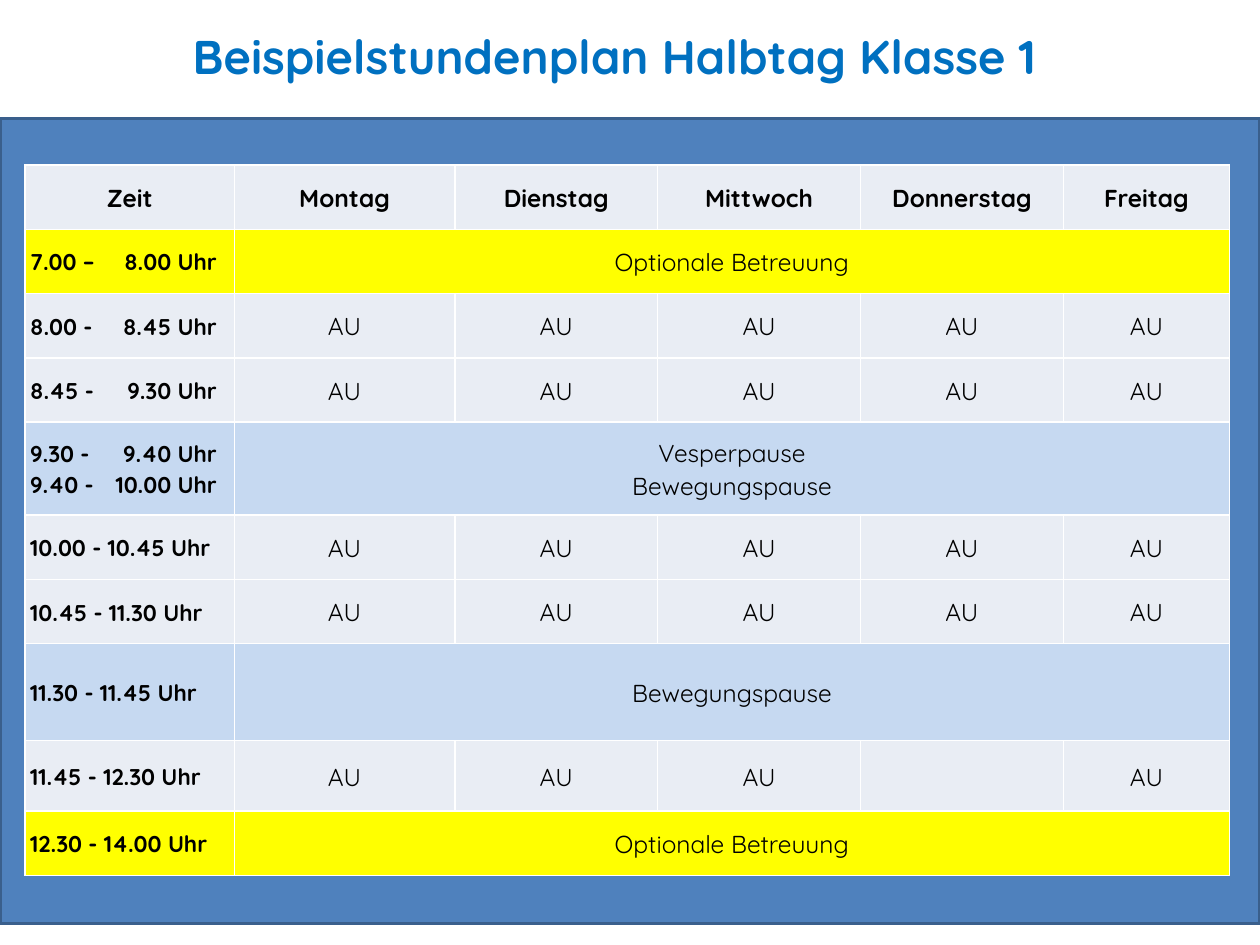
import pptx
import pptx.util
import pptx.dml.color
import pptx.enum.shapes
import pptx.enum.text
import pptx.oxml
import pptx.oxml.ns
from pptx.util import Inches

COLORS = {
    "title": "0070C0",
    "panel": "4F81BD",
    "panel_line": "3A5F8C",
    "lesson": "E9EDF4",
    "care": "FFFF00",
    "pause": "C6D9F1",
    "border": "FFFFFF",
    "text": "000000",
}
CENTER = pptx.enum.text.PP_ALIGN.CENTER
LEFT = pptx.enum.text.PP_ALIGN.LEFT
MIDDLE = pptx.enum.text.MSO_ANCHOR.MIDDLE
TITLE = {"name": "Quicksand", "size": pptx.util.Pt(27), "bold": True}
HEADING = {"name": "Quicksand", "size": pptx.util.Pt(14), "bold": True}
TIME = {"name": "Quicksand", "size": pptx.util.Pt(13), "bold": True}
ENTRY = {"name": "Quicksand", "size": pptx.util.Pt(14), "bold": False}
CELL = {
    "margin_left": Inches(0.04),
    "margin_right": Inches(0.04),
    "margin_top": 0,
    "margin_bottom": 0,
    "vertical_anchor": MIDDLE,
}


def rgb(name):
    return pptx.dml.color.RGBColor.from_string(COLORS[name])


def write(paragraph, text, style, color, alignment):
    paragraph.alignment = alignment
    run = paragraph.add_run()
    run.text = text
    for attribute, value in style.items():
        setattr(run.font, attribute, value)
    run.font.color.rgb = rgb(color)


presentation = pptx.Presentation()
presentation.slide_width = Inches(10)
presentation.slide_height = Inches(7.5)
slide = presentation.slides.add_slide(presentation.slide_layouts[6])

panel = slide.shapes.add_shape(
    pptx.enum.shapes.MSO_SHAPE.RECTANGLE, Inches(0), Inches(0.94), Inches(10), Inches(6.39)
)
panel.shadow.inherit = False
panel.fill.solid()
panel.fill.fore_color.rgb = rgb("panel")
panel.line.color.rgb = rgb("panel_line")
panel.line.width = pptx.util.Pt(2)

title = slide.shapes.add_textbox(Inches(0), Inches(0.04), Inches(9.75), Inches(0.8))
title.text_frame.word_wrap = True
title.text_frame.vertical_anchor = MIDDLE
write(title.text_frame.paragraphs[0], "Beispielstundenplan Halbtag Klasse 1", TITLE, "title", CENTER)

lessons = ["AU"] * 5
schedule = [
    (0.51, "lesson", ["Zeit"], ["Montag", "Dienstag", "Mittwoch", "Donnerstag", "Freitag"]),
    (0.51, "care", ["7.00 –\t8.00 Uhr"], ["Optionale Betreuung"]),
    (0.51, "lesson", ["8.00 -\t8.45 Uhr"], lessons),
    (0.51, "lesson", ["8.45 -\t9.30 Uhr"], lessons),
    (0.74, "pause", ["9.30 -\t9.40 Uhr", "9.40 -\t10.00 Uhr"], ["Vesperpause\nBewegungspause"]),
    (0.51, "lesson", ["10.00 - 10.45 Uhr"], lessons),
    (0.51, "lesson", ["10.45 - 11.30 Uhr"], lessons),
    (0.77, "pause", ["11.30 - 11.45 Uhr"], ["Bewegungspause"]),
    (0.56, "lesson", ["11.45 - 12.30 Uhr"], ["AU", "AU", "AU", "", "AU"]),
    (0.51, "care", ["12.30 - 14.00 Uhr"], ["Optionale Betreuung"]),
]
column_widths = [1.66, 1.75, 1.61, 1.61, 1.61, 1.32]

table = slide.shapes.add_table(
    len(schedule), len(column_widths), Inches(0.2), Inches(1.31),
    Inches(sum(column_widths)), Inches(sum(row[0] for row in schedule)),
).table
table.first_row = False
table.horz_banding = False
for column, width in zip(table.columns, column_widths):
    column.width = Inches(width)

for row_index, (height, color, times, entries) in enumerate(schedule):
    table.rows[row_index].height = Inches(height)
    if len(entries) == 1:
        table.cell(row_index, 1).merge(table.cell(row_index, 5))
    contents = [times] + [entry.split("\n") for entry in entries]
    for column_index in range(len(column_widths)):
        cell = table.cell(row_index, column_index)
        for attribute, value in CELL.items():
            setattr(cell, attribute, value)
        properties = cell._tc.get_or_add_tcPr()
        for side in ("lnL", "lnR", "lnT", "lnB"):
            properties.append(pptx.oxml.parse_xml(
                f'<a:{side} {pptx.oxml.ns.nsdecls("a")} w="12700"><a:solidFill>'
                f'<a:srgbClr val="{COLORS["border"]}"/></a:solidFill></a:{side}>'
            ))
        cell.fill.solid()
        cell.fill.fore_color.rgb = rgb(color)
        if column_index >= len(contents):
            continue
        is_time = row_index > 0 and column_index == 0
        style = HEADING if row_index == 0 else TIME if is_time else ENTRY
        for line_index, line in enumerate(contents[column_index]):
            if not line:
                continue
            frame = cell.text_frame
            paragraph = frame.paragraphs[0] if line_index == 0 else frame.add_paragraph()
            paragraph.line_spacing = 1.07
            if "\t" in line:
                paragraph._p.get_or_add_pPr().append(pptx.oxml.parse_xml(
                    f'<a:tabLst {pptx.oxml.ns.nsdecls("a")}>'
                    f'<a:tab pos="{Inches(1.48)}" algn="r"/></a:tabLst>'
                ))
            write(paragraph, line, style, "text", LEFT if is_time else CENTER)

presentation.save("out.pptx")
